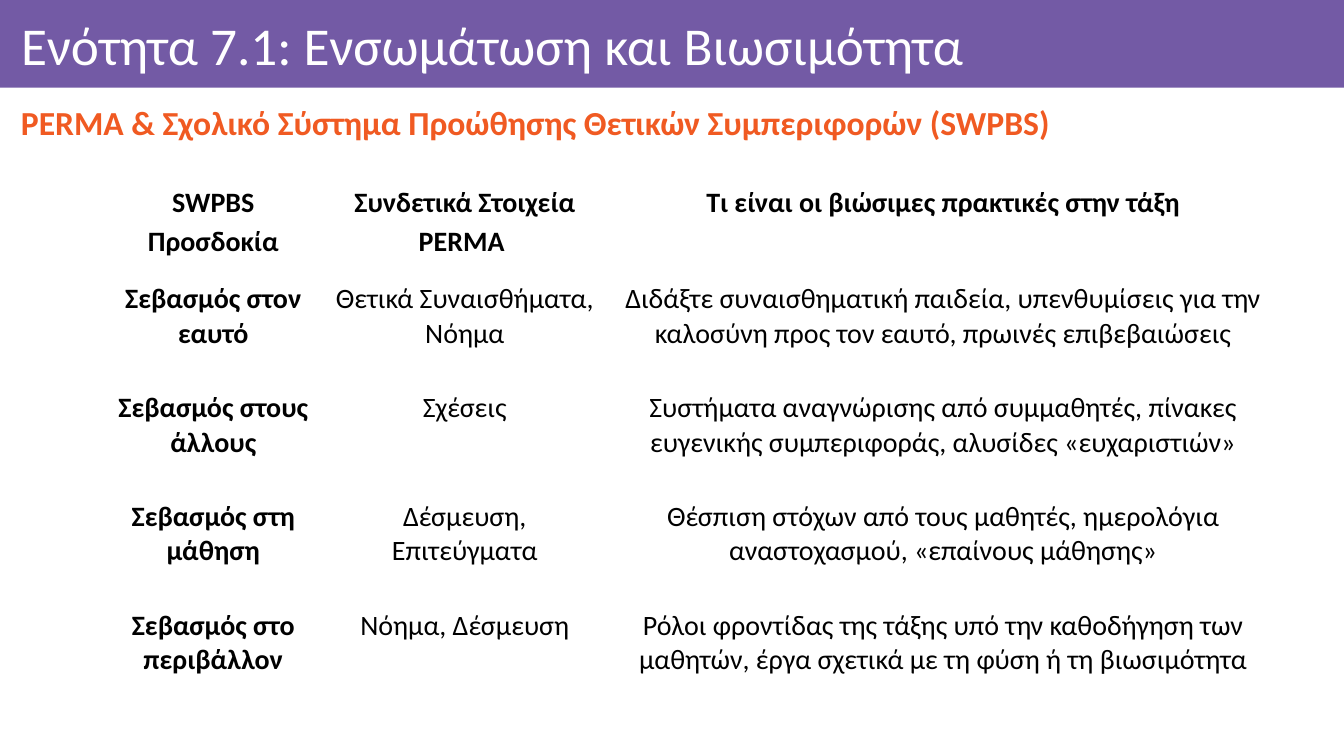
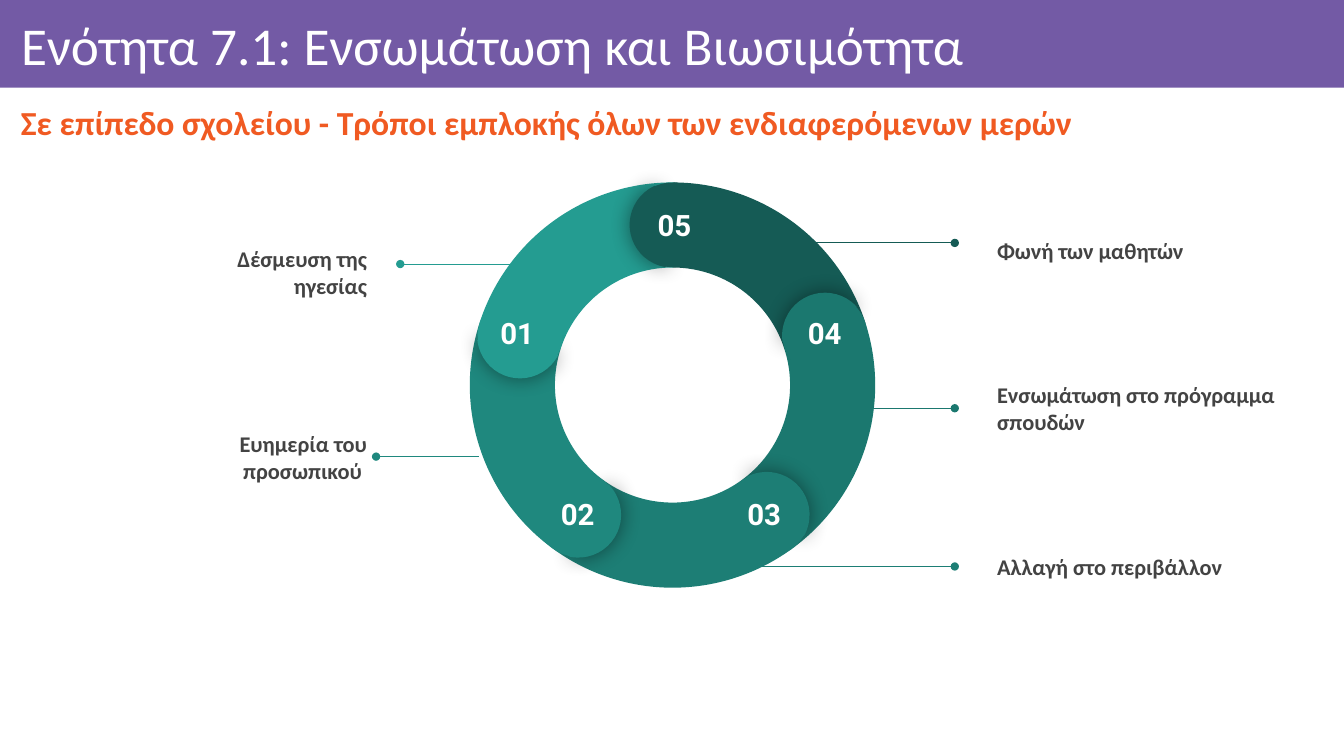
from dataclasses import dataclass
from math import cos, radians, sin

from lxml import etree
from pptx import Presentation
from pptx.dml.color import RGBColor
from pptx.enum.shapes import MSO_CONNECTOR, MSO_SHAPE
from pptx.enum.text import MSO_ANCHOR, MSO_AUTO_SIZE, PP_ALIGN
from pptx.oxml.ns import qn
from pptx.util import Inches, Pt

LEFT, CENTER, RIGHT, JUSTIFY = PP_ALIGN.LEFT, PP_ALIGN.CENTER, PP_ALIGN.RIGHT, PP_ALIGN.JUSTIFY
TOP, MIDDLE = MSO_ANCHOR.TOP, MSO_ANCHOR.MIDDLE
RECTANGLE, ARC, PIE = MSO_SHAPE.RECTANGLE, MSO_SHAPE.BLOCK_ARC, MSO_SHAPE.PIE
STRAIGHT = MSO_CONNECTOR.STRAIGHT
NO_AUTOFIT = MSO_AUTO_SIZE.NONE


@dataclass(frozen=True)
class Theme:
    font: str = "Calibri"
    number_font: str = "Roboto"
    band: str = "735AA5"
    accent: str = "F05A22"
    white: str = "FFFFFF"
    black: str = "000000"
    label: str = "434343"
    title_size: int = 38
    subtitle_size: int = 24
    table_size: int = 20
    label_size: int = 16
    number_size: int = 21


theme = Theme()


def write_text(frame, text, size, color, font=theme.font, bold=False, align=LEFT,
               spacing=1.0, anchor=TOP, margins=None):
    """Fill a text frame; margins are left, top, right, bottom in inches."""
    frame.word_wrap = True
    if margins:
        frame.auto_size = NO_AUTOFIT
        frame.vertical_anchor = anchor
        (frame.margin_left, frame.margin_top,
         frame.margin_right, frame.margin_bottom) = map(Inches, margins)
    para = frame.paragraphs[0]
    para.alignment = align
    para.line_spacing = spacing
    span = para.add_run()
    span.text = text
    span.font.name = font
    span.font.size = Pt(size)
    span.font.bold = bold
    span.font.color.rgb = RGBColor.from_string(color)


def add_solid(shapes, preset, center, width, height, color, rotation=0, adjustments=()):
    """Add a borderless, shadowless shape around a center given in inches."""
    shape = shapes.add_shape(preset, Inches(center[0] - width / 2), Inches(center[1] - height / 2),
                             Inches(width), Inches(height))
    shape.shadow.inherit = False
    shape.fill.solid()
    shape.fill.fore_color.rgb = RGBColor.from_string(color)
    shape.line.fill.background()
    shape.rotation = rotation % 360
    for index, value in enumerate(adjustments):
        shape.adjustments[index] = value
    return shape


deck = Presentation()
deck.slide_width, deck.slide_height = Inches(13.33), Inches(7.5)

# Pages with band, title and subtitle
SUBTITLES = [
    "PERMA & Σχολικό Σύστημα Προώθησης Θετικών Συμπεριφορών (SWPBS) ",
    "Σε επίπεδο σχολείου - Τρόποι εμπλοκής όλων των ενδιαφερόμενων μερών",
]
pages = []
for subtitle in SUBTITLES:
    page = deck.slides.add_slide(deck.slide_layouts[5])
    band = add_solid(page.shapes, RECTANGLE, (6.665, 0.435), 13.33, 0.87, theme.band)
    title = page.shapes.title
    title.element.addprevious(band.element)
    title.left, title.top = Inches(0.11), Inches(0.09)
    title.width, title.height = Inches(13.06), Inches(0.78)
    write_text(title.text_frame, "Ενότητα 7.1: Ενσωμάτωση και Βιωσιμότητα", theme.title_size,
               theme.white, spacing=0.9, anchor=MIDDLE, margins=(0.1, 0.06, 0.06, 0.06))
    box = page.shapes.add_textbox(Inches(0.11), Inches(0.94), Inches(13.06), Inches(0.6))
    write_text(box.text_frame, subtitle, theme.subtitle_size, theme.accent, bold=True,
               align=JUSTIFY, spacing=0.9, anchor=MIDDLE, margins=(0.1, 0.05, 0.1, 0.05))
    pages.append(page)
table_page, ring_page = pages

# Table of expectations
ROWS = [
    ("SWPBS Προσδοκία", "Συνδετικά Στοιχεία PERMA ",
     "Τι είναι οι βιώσιμες πρακτικές στην τάξη"),
    ("Σεβασμός στον εαυτό", "Θετικά Συναισθήματα, Νόημα",
     "Διδάξτε συναισθηματική παιδεία, υπενθυμίσεις για την καλοσύνη προς τον εαυτό, "
     "πρωινές επιβεβαιώσεις"),
    ("Σεβασμός στους άλλους", "Σχέσεις",
     "Συστήματα αναγνώρισης από συμμαθητές, πίνακες ευγενικής συμπεριφοράς, "
     "αλυσίδες «ευχαριστιών»"),
    ("Σεβασμός στη μάθηση", "Δέσμευση, Επιτεύγματα",
     "Θέσπιση στόχων από τους μαθητές, ημερολόγια αναστοχασμού, «επαίνους μάθησης»"),
    ("Σεβασμός στο περιβάλλον", "Νόημα, Δέσμευση",
     "Ρόλοι φροντίδας της τάξης υπό την καθοδήγηση των μαθητών, έργα σχετικά με τη φύση "
     "ή τη βιωσιμότητα"),
]
COLUMN_WIDTHS = [2.15, 2.84, 6.65]
HEADER_HEIGHT, ROW_HEIGHT = 1.01, 1.08
table = table_page.shapes.add_table(
    len(ROWS), len(COLUMN_WIDTHS), Inches(1.04), Inches(1.69), Inches(sum(COLUMN_WIDTHS)),
    Inches(HEADER_HEIGHT + ROW_HEIGHT * (len(ROWS) - 1))).table
table.first_row = table.horz_banding = False
for column, width in zip(table.columns, COLUMN_WIDTHS):
    column.width = Inches(width)
for row_index, texts in enumerate(ROWS):
    is_header = row_index == 0
    table.rows[row_index].height = Inches(HEADER_HEIGHT if is_header else ROW_HEIGHT)
    for column_index, text in enumerate(texts):
        cell = table.cell(row_index, column_index)
        cell.fill.background()
        cell.margin_left = cell.margin_right = cell.margin_top = cell.margin_bottom = Inches(0.1)
        write_text(cell.text_frame, text, theme.table_size, theme.black, align=CENTER,
                   bold=is_header or column_index == 0, spacing=1.15 if is_header else 1.0)

# Labels and their lines: text, color, line start, line end, line y, box left, top, width, align
LABELS = [
    ("Δέσμευση της ηγεσίας", "249C91", 5.15, 3.97, 2.62, 1.74, 2.02, 2.03, RIGHT),
    ("Ευημερία του προσωπικού ", "1F887E", 4.75, 3.73, 4.53, 1.43, 3.86, 2.34, RIGHT),
    ("Αλλαγή στο περιβάλλον", "1D7E75", 6.79, 9.47, 5.62, 9.76, 4.95, 3.1, LEFT),
    ("Ενσωμάτωση στο πρόγραμμα σπουδών", "1B786F", 8.18, 9.47, 4.05, 9.76, 3.37, 3.1, LEFT),
    ("Φωνή των μαθητών", "155B55", 7.6, 9.47, 2.41, 9.76, 1.81, 3.1, LEFT),
]
for text, color, start, end, line_y, left, top, width, align in LABELS:
    line = ring_page.shapes.add_connector(STRAIGHT, Inches(start), Inches(line_y),
                                          Inches(end), Inches(line_y))
    line.line.color.rgb = RGBColor.from_string(color)
    line.line.width = Pt(0.75)
    properties = line.element.spPr
    etree.SubElement(properties.find(qn("a:ln")), qn("a:tailEnd"), type="oval")
    etree.SubElement(properties, qn("a:effectLst"))
    box = ring_page.shapes.add_textbox(Inches(left), Inches(top), Inches(width), Inches(1.35))
    write_text(box.text_frame, text, theme.label_size, theme.label, bold=True, align=align,
               anchor=MIDDLE, margins=(0.13,) * 4)

# Ring: the last step starts at the top, earlier ones follow clockwise
RING_CENTER = (6.67, 3.82)
RING_SIZE, CAP_ORBIT = 4.02, 1.59
FRONT_SIZE, BACK_SIZE = 0.85, 0.84
STEP_ANGLE = 360 / len(LABELS)
NUMBER_CORNERS = [(6.32, 1.92), (7.81, 3), (7.21, 4.79), (5.36, 4.79), (4.76, 3)]
step_colors = [label[1] for label in reversed(LABELS)]

for index, color in enumerate(step_colors):
    add_solid(ring_page.shapes, ARC, RING_CENTER, RING_SIZE, RING_SIZE, color,
              60 + index * STEP_ANGLE, (126.03, 169.3, 0.21))

for index, (color, (left, top)) in enumerate(zip(step_colors, NUMBER_CORNERS)):
    turn = index * STEP_ANGLE
    angle = radians(turn - 90)
    cap_center = (RING_CENTER[0] + CAP_ORBIT * cos(angle),
                  RING_CENTER[1] + CAP_ORBIT * sin(angle))
    front = add_solid(ring_page.shapes, PIE, cap_center, FRONT_SIZE, FRONT_SIZE, color,
                      356 + turn, (61.9, 149.96))
    shadow = etree.SubElement(front.element.spPr.find(qn("a:effectLst")), qn("a:outerShdw"),
                              blurRad=str(Pt(15)), dist="0", dir="0", algn="ctr", rotWithShape="0")
    shade = etree.SubElement(shadow, qn("a:srgbClr"), val=theme.black)
    etree.SubElement(shade, qn("a:alpha"), val="43000")
    add_solid(ring_page.shapes, PIE, cap_center, BACK_SIZE, BACK_SIZE, color,
              175.3 + turn, (40.28, 171.84))
    box = ring_page.shapes.add_textbox(Inches(left), Inches(top), Inches(0.74), Inches(0.39))
    write_text(box.text_frame, f"{len(LABELS) - index:02}", theme.number_size, theme.white,
               font=theme.number_font, bold=True, align=CENTER, margins=(0.13,) * 4)

deck.save("out.pptx")
